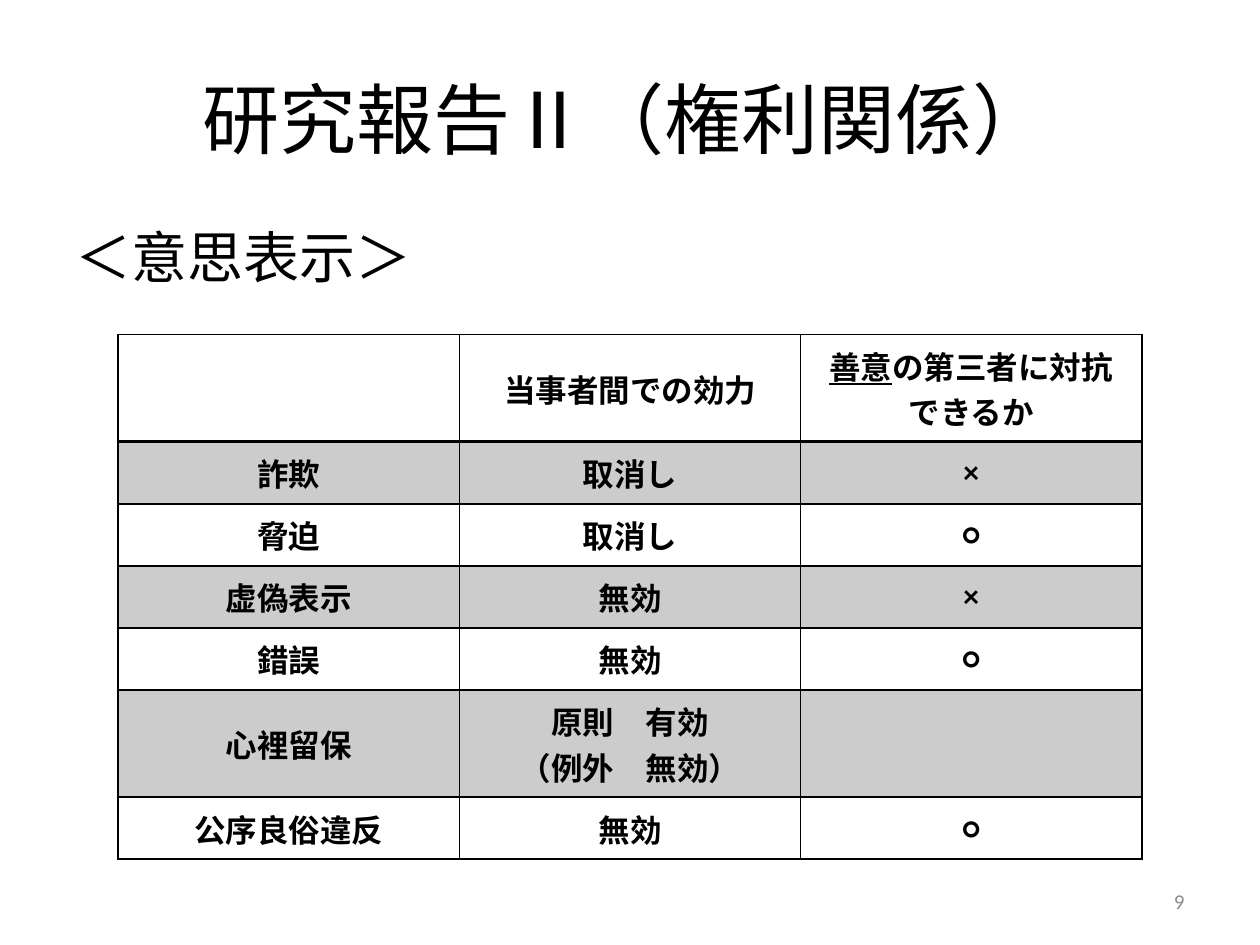
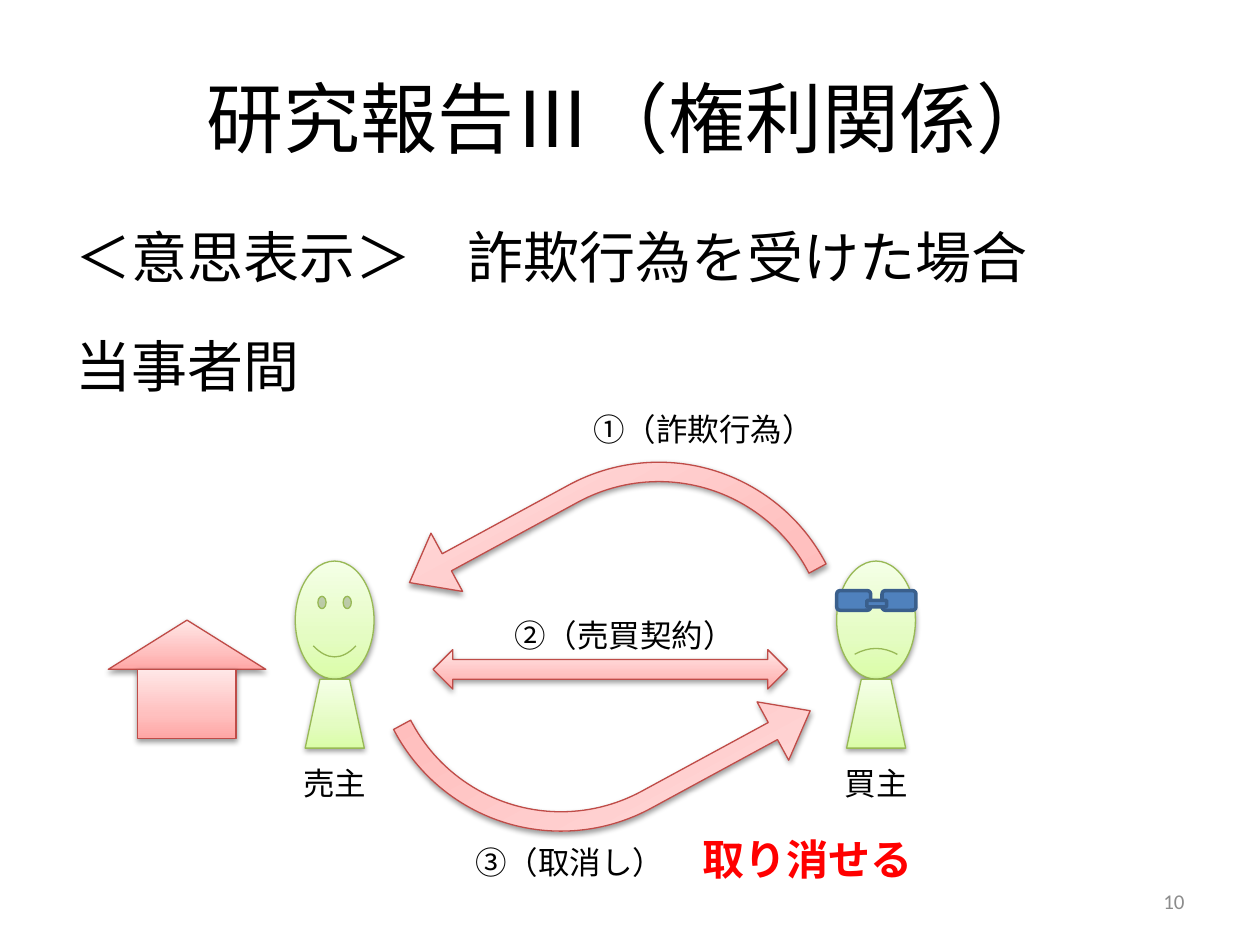
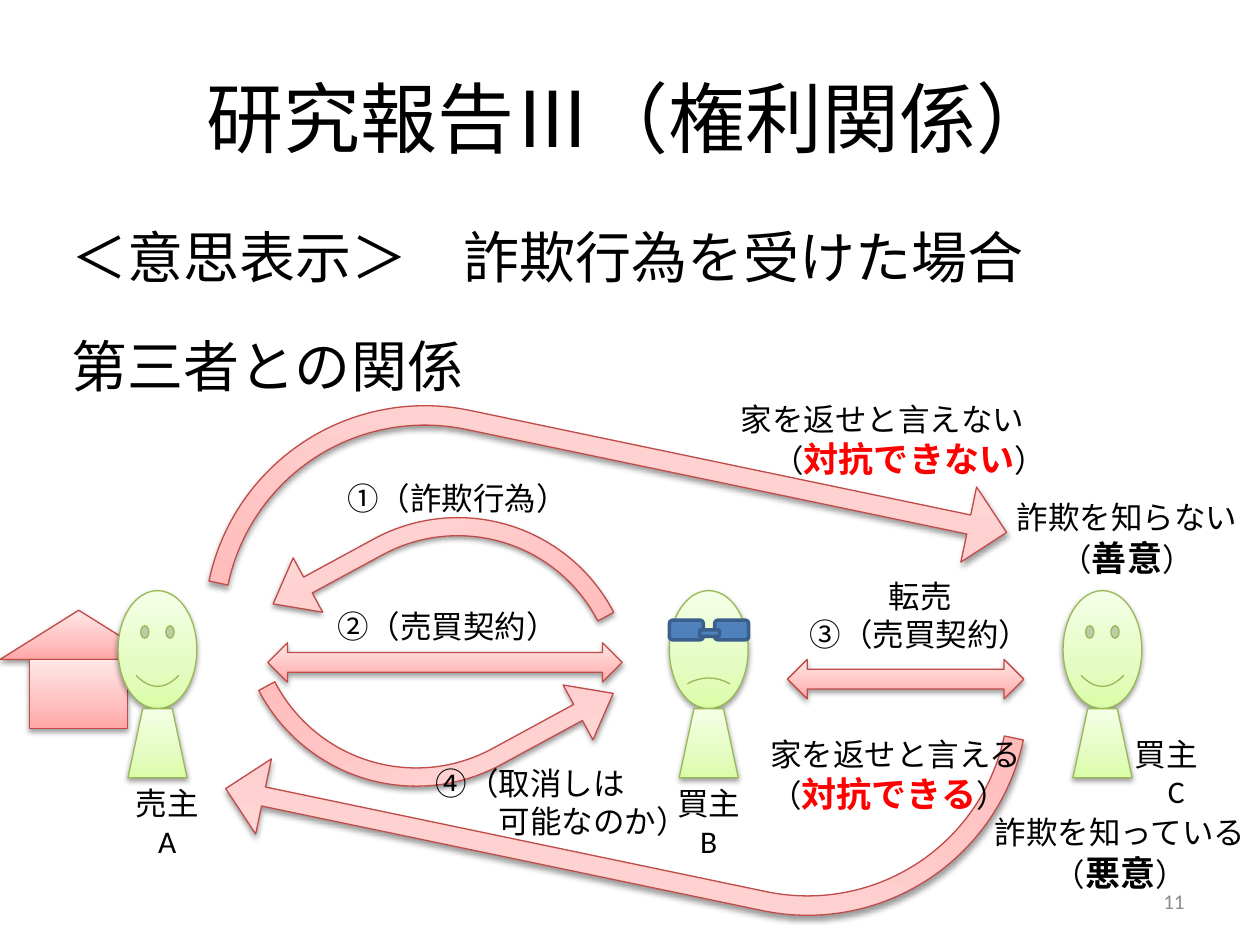
import lxml.etree
import pptx
import pptx.dml.color
import pptx.enum.shapes
import pptx.enum.text
import pptx.oxml.ns
import pptx.util

SHAPE = pptx.enum.shapes.MSO_SHAPE
ALIGN = pptx.enum.text.PP_ALIGN
ALIGNMENTS = {"l": ALIGN.LEFT, "c": ALIGN.CENTER, "r": ALIGN.RIGHT}

THEME = {
    "font": "Calibri",
    "text": "000000",
    "shade_alpha": 20,
    "shadow": {"blurRad": 40000, "dist": 20000, "dir": 5400000, "rotWithShape": 0},
    "shadow_alpha": 38,
    "styles": {
        "title": {"size": 44},
        "body": {"size": 32},
        "number": {"size": 12, "color": "8C8C8C"},
        "label": {"size": 18},
        "cell": {"size": 18, "bold": True},
        "underlined": {"size": 18, "bold": True, "underline": True},
        "strong": {"size": 20, "bold": True},
        "alert": {"size": 20, "bold": True, "color": "FF0000"},
        "verdict": {"size": 24, "bold": True, "color": "FF0000"},
    },
    "paints": {
        "green": {"stops": [(0, "DAFDA7"), (35, "E4FCC2"), (100, "F5FFE7")],
                  "line": "98B955", "width": 0.75},
        "red": {"stops": [(0, "FFA6A5"), (35, "FFC0BF"), (100, "FFE7E7")],
                "line": "BF4C48", "width": 0.75},
        "blue": {"solid": "4F81BD", "line": "3A5F8C", "width": 2},
    },
}

# All places are in grid cells: 128 columns by 96 rows fill the slide.
SLIDE_WIDTH, SLIDE_HEIGHT = pptx.util.Inches(10), pptx.util.Inches(7.5)
CELL = SLIDE_WIDTH / 128
FIRST_NUMBER = 9
TITLE_AREA = (6.4, 3.84, 115.2, 16)
NUMBER_AREA = (91.8, 89, 29.8, 5.1)
CURVE = (0.09, 0.154, 0.197, 0.875)
LONG_CURVE = (0.078, 0.154, 0.155, 0.898)

# Part: shape, offset and size in cells, paint, flips
HOUSE = [
    (SHAPE.FLOWCHART_EXTRACT, (0, 0, 16, 5), "red", ""),
    (SHAPE.RECTANGLE, (3, 5, 10, 7), "red", ""),
]
PERSON = [
    (SHAPE.SMILEY_FACE, (0, 0, 8, 12), "green", ""),
    (SHAPE.TRAPEZOID, (1, 12, 6, 7), "green", ""),
]
GLASSES = [
    (SHAPE.ROUNDED_RECTANGLE, (0, 3, 3.45, 2), "blue", ""),
    (SHAPE.ROUNDED_RECTANGLE, (4.6, 3, 3.45, 2), "blue", ""),
    (SHAPE.ROUND_1_RECTANGLE, (3.07, 4, 2, 0.65), "blue", "V"),
]

TABLE = {
    "area": (12, 34, 104, 53),
    "rows": [10.9, 6.3, 6.3, 6.3, 6.3, 10.9, 6.3],
    "cells": [
        [[], ["当事者間での効力"],
         [[("善意", "underlined"), "の第三者に対抗"], "できるか"]],
        [["詐欺"], ["取消し"], ["×"]],
        [["脅迫"], ["取消し"], ["○"]],
        [["虚偽表示"], ["無効"], ["×"]],
        [["錯誤"], ["無効"], ["○"]],
        [["心裡留保"], ["原則　有効", "（例外　無効）"], []],
        [["公序良俗違反"], ["無効"], ["○"]],
    ],
}

# Bent arrow: area, rotation, flips, adjustments
# Label: left, top, width, alignment of each line, lines, style
SLIDES = [
    {
        "title": "研究報告Ⅱ（権利関係）",
        "title_area": (6, 4, 115.2, 16),
        "body": ["＜意思表示＞"],
        "table": TABLE,
    },
    {
        "title": "研究報告Ⅲ（権利関係）",
        "body": ["＜意思表示＞　詐欺行為を受けた場合", "当事者間"],
        "houses": [(11, 63)],
        "sellers": [(30, 57)],
        "buyers": [(85, 57)],
        "bent_arrows": [
            ((42.9, 63.7, 38.1, 21.9), 331.5, "V", CURVE),
            ((42.9, 45.8, 38.1, 21.9), 151.5, "V", CURVE),
        ],
        "double_arrows": [(44, 66, 36, 4)],
        "labels": [
            (27, 77, 14, "c", ["売主"], "label"),
            (82, 77, 14, "c", ["買主"], "label"),
            (59, 41, 25, "l", ["①（詐欺行為）"], "label"),
            (47, 85, 25, "l", ["③（取消し）"], "label"),
            (51, 62, 25, "l", ["②（売買契約）"], "label"),
            (68, 84, 28, "c", ["取り消せる"], "verdict"),
        ],
    },
    {
        "title": "研究報告Ⅲ（権利関係）",
        "body_left": 6,
        "body": ["＜意思表示＞　詐欺行為を受けた場合", "第三者との関係"],
        "houses": [(0, 62)],
        "sellers": [(12, 60), (108, 60)],
        "buyers": [(68, 60)],
        "bent_arrows": [
            ((29.3, 50.2, 30, 20.4), 151.5, "V", CURVE),
            ((29.3, 61.4, 31.5, 20.6), 331.5, "V", CURVE),
            ((23, 42, 78.3, 25.3), 191.8, "HV", LONG_CURVE),
            ((23.9, 66.9, 78.3, 25.3), 11.8, "HV", LONG_CURVE),
        ],
        "double_arrows": [(27.2, 65.3, 36, 4), (80, 67, 24, 4)],
        "labels": [
            (33, 61, 25, "l", ["②（売買契約）"], "label"),
            (34, 48, 25, "l", ["①（詐欺行為）"], "label"),
            (10, 79, 14, "cc", ["売主", "A"], "label"),
            (65, 79, 14, "cc", ["買主", "B"], "label"),
            (74, 40, 33.5, "lr",
             ["家を返せと言えない", ["（", ("対抗できない", "alert"), "）"]], "label"),
            (77, 74, 33.5, "ll",
             ["家を返せと言える", ["（", ("対抗できる", "alert"), "）"]], "label"),
            (101, 50, 27, "cc",
             ["詐欺を知らない", ["（", ("善意", "strong"), "）"]], "label"),
            (99.6, 82, 28.4, "cc",
             ["詐欺を知っている", ["（", ("悪意", "strong"), "）"]], "label"),
            (81, 58, 25, "cl", ["転売", "③（売買契約）"], "label"),
            (114, 74, 11, "lc", ["買主", "C"], "label"),
            (43, 77, 31, "ll", ["④（取消しは", "　　可能なのか）"], "label"),
        ],
    },
]


def rgb(value):
    return pptx.dml.color.RGBColor.from_string(value)


def cells(*values):
    return [pptx.util.Emu(round(value * CELL)) for value in values]


def set_attributes(target, values):
    for name, value in values.items():
        setattr(target, name, value)


def add_element(parent, tag, **attributes):
    element = lxml.etree.SubElement(parent, pptx.oxml.ns.qn(tag))
    for name, value in attributes.items():
        element.set(name, str(value))
    return element


def add_color(parent, color, alpha=100):
    element = add_element(parent, "a:srgbClr", val=color)
    if alpha < 100:
        add_element(element, "a:alpha", val=alpha * 1000)


def write_text(frame, lines, style_name, alignments):
    """Write lines, each a string or a list of strings and (text, style) pairs."""
    for index, (line, alignment) in enumerate(zip(lines, alignments)):
        paragraph = frame.paragraphs[0] if index == 0 else frame.add_paragraph()
        paragraph.alignment = ALIGNMENTS[alignment]
        for part in [line] if isinstance(line, str) else line:
            text, name = (part, style_name) if isinstance(part, str) else part
            style = THEME["styles"][name]
            run = paragraph.add_run()
            run.text = text
            set_attributes(run.font, {
                "name": THEME["font"],
                "size": pptx.util.Pt(style["size"]),
                "bold": style.get("bold", False),
                "underline": style.get("underline", False),
            })
            run.font.color.rgb = rgb(style.get("color", THEME["text"]))


def add_text(slide, area, lines, style_name, alignments, **frame_format):
    frame = slide.shapes.add_textbox(*cells(*area)).text_frame
    set_attributes(frame, {"word_wrap": True, **frame_format})
    write_text(frame, lines, style_name, alignments)
    return frame


def add_label(slide, left, top, width, alignments, lines, style_name):
    styles = THEME["styles"]
    height = pptx.util.Inches(0.1)
    for line in lines:
        names = [part[1] for part in line if isinstance(part, tuple)] or [style_name]
        height += pptx.util.Pt(1.2 * max(styles[name]["size"] for name in names))
    add_text(slide, (left, top, width, height / CELL), lines, style_name, alignments,
             auto_size=pptx.enum.text.MSO_AUTO_SIZE.SHAPE_TO_FIT_TEXT)


def add_painted_shape(shapes, kind, area, paint_name, flips="", rotation=0, adjustments=()):
    paint = THEME["paints"][paint_name]
    shape = shapes.add_shape(kind, *cells(*area))
    shape.rotation = rotation
    for index, value in enumerate(adjustments):
        shape.adjustments[index] = value
    properties = shape._element.spPr
    for flip in flips:
        properties.xfrm.set("flip" + flip, "1")
    shape.line.color.rgb = rgb(paint["line"])
    shape.line.width = pptx.util.Pt(paint["width"])
    shape.shadow.inherit = False
    if "solid" in paint:
        shape.fill.solid()
        shape.fill.fore_color.rgb = rgb(paint["solid"])
        return
    shape.fill.gradient()
    shape.fill.gradient_angle = 90
    stop_list = properties.find(".//" + pptx.oxml.ns.qn("a:gsLst"))
    for stop in list(stop_list):
        stop_list.remove(stop)
    for position, color in paint["stops"]:
        add_color(add_element(stop_list, "a:gs", pos=position * 1000), color)
    effects = properties.find(pptx.oxml.ns.qn("a:effectLst"))
    shadow = add_element(effects, "a:outerShdw", **THEME["shadow"])
    add_color(shadow, "000000", THEME["shadow_alpha"])


def add_figure(slide, parts, origin, mouth=None):
    """Group parts at an origin; mouth bends the smile of the first part."""
    group = slide.shapes.add_group_shape()
    for index, (kind, (left, top, width, height), paint, flips) in enumerate(parts):
        area = (origin[0] + left, origin[1] + top, width, height)
        adjustments = [mouth] if index == 0 and mouth is not None else []
        add_painted_shape(group.shapes, kind, area, paint, flips, adjustments=adjustments)


def format_cell(cell, row_index):
    cell.vertical_anchor = pptx.enum.text.MSO_ANCHOR.MIDDLE
    properties = cell._tc.get_or_add_tcPr()
    for side in "LRTB":
        thick = (row_index, side) in ((0, "B"), (1, "T"))
        line = add_element(properties, "a:ln" + side, w=pptx.util.Pt(2 if thick else 1))
        add_color(add_element(line, "a:solidFill"), THEME["text"])
    if row_index % 2:
        shade = add_element(properties, "a:solidFill")
        add_color(shade, THEME["text"], THEME["shade_alpha"])
    else:
        cell.fill.background()


def add_effect_table(slide, content):
    rows = content["cells"]
    table = slide.shapes.add_table(len(rows), len(rows[0]), *cells(*content["area"])).table
    set_attributes(table, {"first_row": False, "horz_banding": False})
    for column in table.columns:
        column.width = cells(content["area"][2] / len(rows[0]))[0]
    for row_index, (row, height) in enumerate(zip(rows, content["rows"])):
        table.rows[row_index].height = cells(height)[0]
        for column_index, lines in enumerate(row):
            cell = table.cell(row_index, column_index)
            format_cell(cell, row_index)
            write_text(cell.text_frame, lines, "cell", "c" * len(lines))


def add_slide(presentation, number, content):
    slide = presentation.slides.add_slide(presentation.slide_layouts[5])
    for origin in content.get("houses", []):
        add_figure(slide, HOUSE, origin)

    title = slide.shapes.title
    area = cells(*content.get("title_area", TITLE_AREA))
    set_attributes(title, dict(zip(("left", "top", "width", "height"), area)))
    title.text_frame.vertical_anchor = pptx.enum.text.MSO_ANCHOR.MIDDLE
    write_text(title.text_frame, [content["title"]], "title", "c")

    body = add_text(slide, (content.get("body_left", 6.4), 22, 115.2, 68),
                    content["body"], "body", "ll")
    for paragraph, space in zip(body.paragraphs, (6.4, 24)):
        paragraph.space_before = pptx.util.Pt(space)
    add_text(slide, NUMBER_AREA, [str(number)], "number", "r",
             vertical_anchor=pptx.enum.text.MSO_ANCHOR.MIDDLE)

    if "table" in content:
        add_effect_table(slide, content["table"])
    for origin in content.get("sellers", []):
        add_figure(slide, PERSON, origin)
    for origin in content.get("buyers", []):
        add_figure(slide, PERSON + GLASSES, origin, mouth=-0.025)
    for area, rotation, flips, adjustments in content.get("bent_arrows", []):
        add_painted_shape(slide.shapes, SHAPE.BENT_ARROW, area, "red",
                          flips, rotation, adjustments)
    for area in content.get("double_arrows", []):
        add_painted_shape(slide.shapes, SHAPE.LEFT_RIGHT_ARROW, area, "red")
    for label in content.get("labels", []):
        add_label(slide, *label)


def main():
    presentation = pptx.Presentation()
    set_attributes(presentation, {"slide_width": SLIDE_WIDTH, "slide_height": SLIDE_HEIGHT})
    for number, content in enumerate(SLIDES, FIRST_NUMBER):
        add_slide(presentation, number, content)
    presentation.save("out.pptx")


if __name__ == "__main__":
    main()
